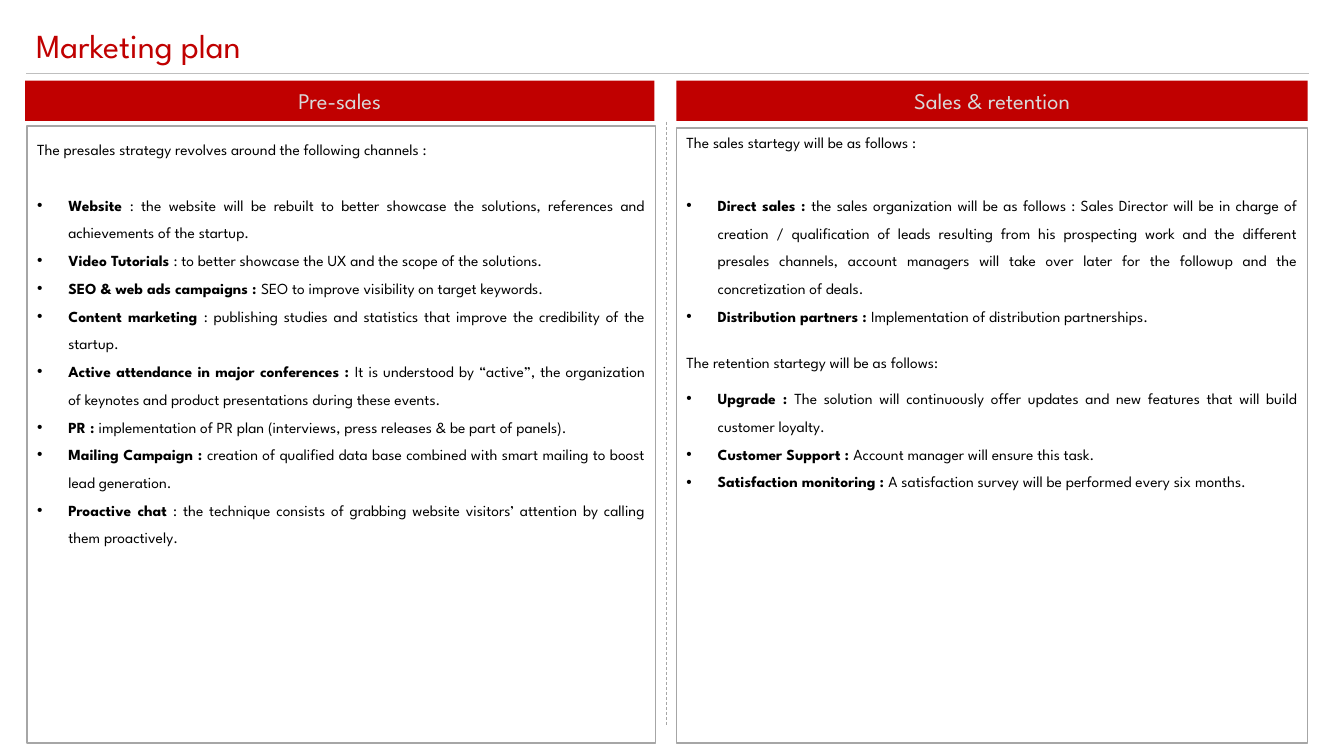
from dataclasses import dataclass

from lxml.etree import SubElement
from pptx import Presentation
from pptx.dml.color import RGBColor
from pptx.enum.dml import MSO_LINE
from pptx.enum.shapes import MSO_CONNECTOR, MSO_SHAPE
from pptx.enum.text import MSO_ANCHOR, PP_ALIGN
from pptx.oxml.ns import qn
from pptx.shapes.autoshape import Shape
from pptx.slide import Slide
from pptx.text.text import _Paragraph
from pptx.util import Inches, Pt


@dataclass(frozen=True)
class Theme:
    font: str = "League Spartan"
    red: str = "C00000"
    header_text: str = "D9D9D9"
    body_text: str = "000000"
    border: str = "A6A6A6"
    rule: str = "BFBFBF"
    title_size: int = 24
    header_size: int = 16
    body_size: int = 11


@dataclass(frozen=True)
class Line:
    text: str
    label: str = ""  # a bold label makes the line a bullet
    spacing: float = 1.5
    after: float = 0


@dataclass(frozen=True)
class Frame:
    left: float
    top: float
    width: float
    height: float


@dataclass(frozen=True)
class Column:
    heading: str
    header: Frame
    body: Frame
    lines: tuple[Line, ...]


THEME = Theme()
INDENT = 0.31

COLUMNS = (
    Column("Pre-sales", Frame(0.25, 0.8, 6.24, 0.4), Frame(0.27, 1.25, 6.23, 6.12), (
        Line("The presales strategy revolves around the following channels :", after=19.8),
        Line(": the website will be rebuilt to better showcase the solutions, references "
             "and achievements of the startup.", "Website "),
        Line(": to better showcase the UX and the scope of the solutions.", "Video Tutorials "),
        Line("SEO to improve visibility on target keywords.", "SEO & web ads campaigns : "),
        Line(": publishing studies and statistics that improve the credibility of the "
             "startup.", "Content marketing "),
        Line("It is understood by “active”, the organization of keynotes and product "
             "presentations during these events.", "Active attendance in major conferences : "),
        Line("implementation of PR plan (interviews, press releases & be part of panels).",
             "PR : "),
        Line("creation of qualified data base combined with smart mailing to boost lead "
             "generation.", "Mailing Campaign : "),
        Line(": the technique consists of grabbing website visitors’ attention by calling "
             "them proactively.", "Proactive chat "),
    )),
    Column("Sales & retention", Frame(6.71, 0.8, 6.26, 0.4), Frame(6.71, 1.27, 6.26, 6.1), (
        Line("The sales startegy will be as follows :", spacing=1, after=25.2),
        Line("the sales organization will be as follows : Sales Director will be in charge "
             "of creation / qualification of leads resulting from his prospecting work and "
             "the different presales channels, account managers will take over later for "
             "the followup and the concretization of deals.", "Direct sales : "),
        Line("Implementation of distribution partnerships.", "Distribution partners : ",
             after=19.8),
        Line("The retention startegy will be as follows:", spacing=1, after=6),
        Line("The solution will continuously offer updates and new features that will "
             "build customer loyalty.", "Upgrade : "),
        Line("Account manager will ensure this task.", "Customer Support : "),
        Line("A satisfaction survey will be performed every six months.",
             "Satisfaction monitoring : "),
    )),
)


def set_font(para: _Paragraph, size: int, color: str) -> None:
    para.font.name = THEME.font
    para.font.size = Pt(size)
    para.font.color.rgb = RGBColor.from_string(color)


def add_bullet(para: _Paragraph) -> None:
    properties = para._p.get_or_add_pPr()
    properties.set("marL", str(Inches(INDENT)))
    properties.set("indent", str(-Inches(INDENT)))
    SubElement(properties, qn("a:buFont"), typeface="Arial")
    SubElement(properties, qn("a:buChar"), char="•")


def add_rectangle(page: Slide, frame: Frame) -> Shape:
    box = page.shapes.add_shape(MSO_SHAPE.RECTANGLE, Inches(frame.left), Inches(frame.top),
                                Inches(frame.width), Inches(frame.height))
    box.shadow.inherit = False
    box.text_frame.word_wrap = True
    return box


def add_line(page: Slide, start: tuple[float, float], end: tuple[float, float],
             color: str, dash: MSO_LINE | None = None) -> None:
    line = page.shapes.add_connector(MSO_CONNECTOR.STRAIGHT, *map(Inches, start + end))
    line.line.color.rgb = RGBColor.from_string(color)
    line.line.width = Pt(0.5)
    line.line.dash_style = dash
    SubElement(line._element.spPr, qn("a:effectLst"))


def add_title(page: Slide, text: str) -> None:
    box = page.shapes.add_textbox(Inches(0.26), Inches(0.28), Inches(11.5), Inches(0.44))
    box.text_frame.word_wrap = True
    para = box.text_frame.paragraphs[0]
    para.text = text
    para.line_spacing = 0.8
    set_font(para, THEME.title_size, THEME.red)


def add_header(page: Slide, column: Column) -> None:
    box = add_rectangle(page, column.header)
    box.fill.solid()
    box.fill.fore_color.rgb = RGBColor.from_string(THEME.red)
    box.line.fill.background()
    box.text_frame.vertical_anchor = MSO_ANCHOR.MIDDLE
    para = box.text_frame.paragraphs[0]
    para.text = column.heading
    para.alignment = PP_ALIGN.CENTER
    set_font(para, THEME.header_size, THEME.header_text)


def add_body(page: Slide, column: Column) -> None:
    box = add_rectangle(page, column.body)
    box.fill.background()
    box.line.color.rgb = RGBColor.from_string(THEME.border)
    box.line.width = Pt(1)
    text_frame = box.text_frame
    text_frame.vertical_anchor = MSO_ANCHOR.TOP
    for index, line in enumerate(column.lines):
        para = text_frame.add_paragraph() if index else text_frame.paragraphs[0]
        para.alignment = PP_ALIGN.JUSTIFY
        para.line_spacing = float(line.spacing)
        para.space_after = Pt(line.after)
        if line.label:
            add_bullet(para)
            span = para.add_run()
            span.text = line.label
            span.font.bold = True
        para.add_run().text = line.text
        set_font(para, THEME.body_size, THEME.body_text)


def main() -> None:
    deck = Presentation()
    deck.slide_width, deck.slide_height = Inches(13.33), Inches(7.5)
    page = deck.slides.add_slide(deck.slide_layouts[6])

    # Title and its rule
    add_title(page, "Marketing plan")
    add_line(page, (0.26, 0.73), (12.98, 0.73), THEME.rule)

    # Two columns with a dashed divider
    add_line(page, (6.61, 1.21), (6.61, 7.2), THEME.border, MSO_LINE.DASH)
    for column in COLUMNS:
        add_header(page, column)
        add_body(page, column)

    deck.save("out.pptx")


if __name__ == "__main__":
    main()
